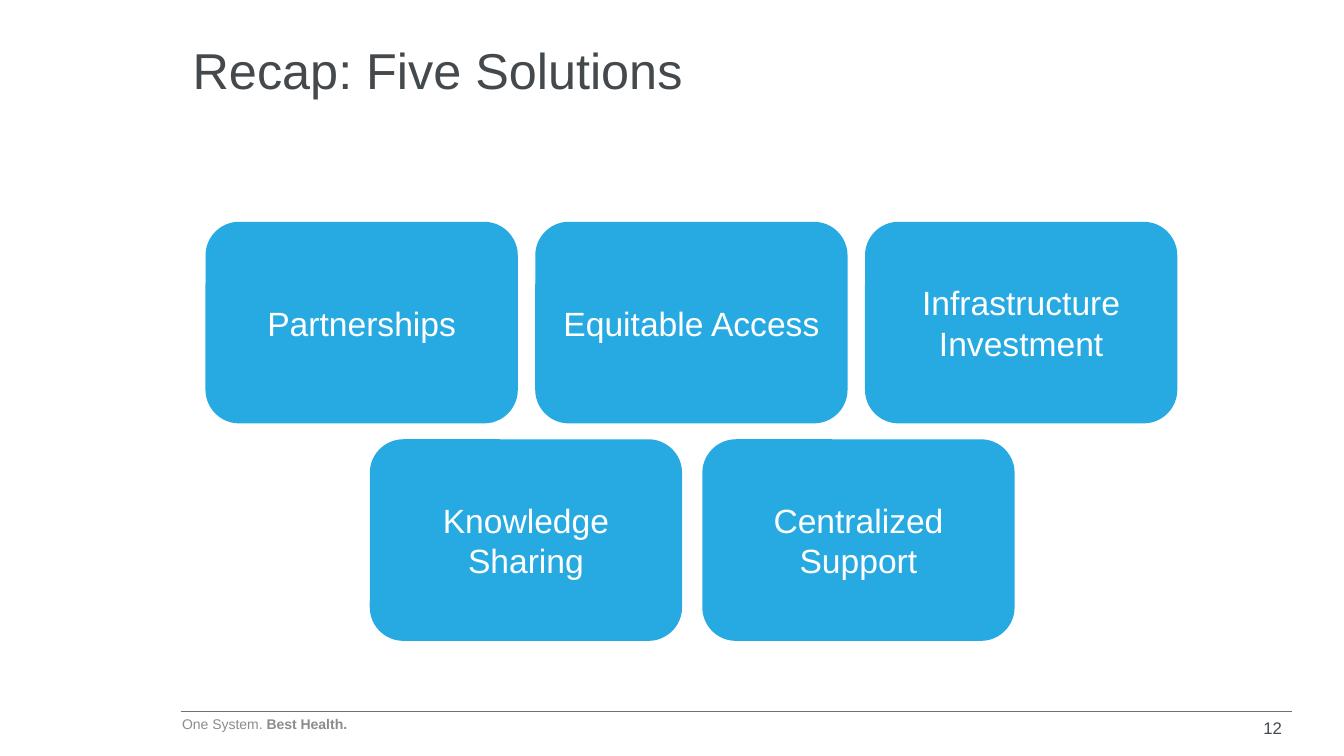
import pptx
import pptx.dml.color
import pptx.enum.shapes
import pptx.enum.text
import pptx.util
from lxml import etree

Cm = pptx.util.Cm
ALIGN = pptx.enum.text.PP_ALIGN
ANCHOR = pptx.enum.text.MSO_ANCHOR

DARK = "44494D"
GREY = "8C8C8C"
RULE = "767171"
BLUE = "27AAE2"
WHITE = "FFFFFF"

TOP_ROW = ["Partnerships", "Equitable Access", "Infrastructure Investment"]
BOTTOM_ROW = ["Knowledge Sharing", "Centralized Support"]


def color(value):
    """Return the colour for a hex string."""
    return pptx.dml.color.RGBColor.from_string(value)


def write(shape, text, size=24, fill=DARK, bold=False, align=ALIGN.LEFT, anchor=ANCHOR.MIDDLE):
    """Add a formatted run to the first paragraph of a shape."""
    frame = shape.text_frame
    frame.word_wrap = True
    frame.auto_size = pptx.enum.text.MSO_AUTO_SIZE.NONE
    frame.vertical_anchor = anchor
    paragraph = frame.paragraphs[0]
    paragraph.alignment = align
    run = paragraph.add_run()
    run.text = text
    run.font.name = "Arial"
    run.font.size = pptx.util.Pt(size)
    run.font.bold = bold
    run.font.color.rgb = color(fill)
    return paragraph


def add_title(slide, left, top, width, height):
    """Place the title placeholder in the given box."""
    title = slide.shapes.title
    title.left, title.top = Cm(left), Cm(top)
    title.width, title.height = Cm(width), Cm(height)
    write(title, "Recap: Five Solutions", size=36).line_spacing = 0.9


def add_card_row(slide, labels, left, top, pitch, width=7.87, height=5.08):
    """Add a row of rounded cards starting at the given corner."""
    for index, label in enumerate(labels):
        card = slide.shapes.add_shape(
            pptx.enum.shapes.MSO_SHAPE.ROUNDED_RECTANGLE,
            Cm(left + index * pitch), Cm(top), Cm(width), Cm(height))
        card.shadow.inherit = False
        card.fill.solid()
        card.fill.fore_color.rgb = color(BLUE)
        card.line.fill.background()
        write(card, label, fill=WHITE, align=ALIGN.CENTER)


def add_footer(slide, left, top, width):
    """Add the rule, motto and page number along the bottom."""
    right = left + width
    rule = slide.shapes.add_connector(
        pptx.enum.shapes.MSO_CONNECTOR.STRAIGHT, Cm(left), Cm(top), Cm(right), Cm(top))
    rule.line.color.rgb = color(RULE)
    rule.line.width = pptx.util.Pt(0.5)
    etree.SubElement(rule.element.spPr, pptx.oxml.ns.qn("a:effectLst"))
    motto = slide.shapes.add_textbox(Cm(left - 0.21), Cm(top - 0.02), Cm(5.11), Cm(1.45))
    write(motto, "One System. ", size=10, fill=GREY, anchor=ANCHOR.TOP)
    write(motto, "Best Health.", size=10, fill=GREY, bold=True, anchor=ANCHOR.TOP)
    number = slide.shapes.add_textbox(Cm(right - 7.62), Cm(top - 0.1), Cm(7.62), Cm(1.02))
    write(number, "12", size=12, align=ALIGN.RIGHT)


def main():
    """Build and save the slide."""
    presentation = pptx.Presentation()
    presentation.slide_width, presentation.slide_height = Cm(33.87), Cm(19.05)
    slide = presentation.slides.add_slide(presentation.slide_layouts[5])
    add_footer(slide, 4.55, 17.93, 28.01)
    add_title(slide, 4.6, 0, 22.76, 3.68)
    add_card_row(slide, TOP_ROW, 5.18, 5.59, 8.31)
    add_card_row(slide, BOTTOM_ROW, 9.32, 11.07, 8.38)
    presentation.save("out.pptx")


if __name__ == "__main__":
    main()
